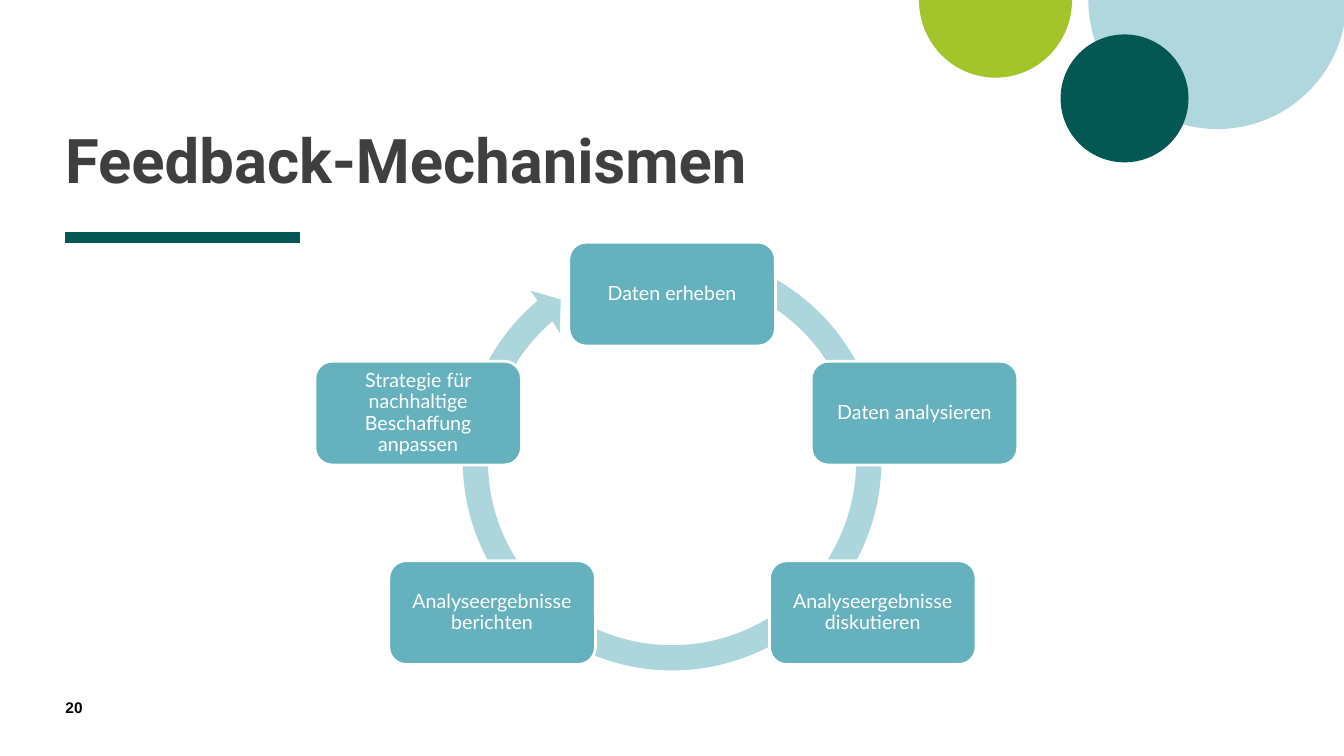
from math import cos, radians, sin, tan

from lxml.etree import Element, SubElement
from pptx import Presentation
from pptx.dml.color import RGBColor
from pptx.enum.shapes import MSO_CONNECTOR, MSO_SHAPE
from pptx.enum.text import MSO_ANCHOR, PP_ALIGN
from pptx.oxml.ns import qn
from pptx.util import Pt

WHITE = RGBColor(0xFF, 0xFF, 0xFF)
BLACK = RGBColor(0x00, 0x00, 0x00)
CHARCOAL = RGBColor(0x3F, 0x3F, 0x3F)
DARK_GREEN = RGBColor(0x03, 0x58, 0x54)
LIME = RGBColor(0xA3, 0xC4, 0x2A)
PALE_BLUE = RGBColor(0xAF, 0xD7, 0xDD)
TEAL = RGBColor(0x65, 0xB1, 0xBE)

STEP_WIDTH, STEP_HEIGHT = 147.6, 74.2
STEPS = [
    ("Daten erheben", 181.4, 0),
    ("Daten analysieren", 354.5, 85),
    ("Analyseergebnisse diskutieren", 324.7, 227.5),
    ("Analyseergebnisse berichten", 52.8, 227.5),
    ("Strategie für nachhaltige Beschaffung anpassen", 0, 85),
]
RING_CENTRE = (255.2, 156.4)
OUTER_RADIUS, INNER_RADIUS = 149.5, 131.5
ARC_PIECES = 5
ARROWHEAD = [(154.1, 34.6), (175.7, 41), (175, 64.8), (170, 56.9)]


def fill_plain(shape, colour):
    """Give a shape a flat fill without outline or shadow."""
    shape.shadow.inherit = False
    shape.fill.solid()
    shape.fill.fore_color.rgb = colour
    shape.line.fill.background()


def write(frame, text, font, size, colour, bold=False, spacing=1.0, inset=0):
    """Write one paragraph into a wrapping text frame and return it."""
    frame.word_wrap = True
    frame.margin_left = frame.margin_right = Pt(inset)
    frame.margin_top = frame.margin_bottom = Pt(inset)
    paragraph = frame.paragraphs[0]
    paragraph.line_spacing = spacing
    run = paragraph.add_run()
    run.text = text
    run.font.name = font
    run.font.size = Pt(size)
    run.font.bold = bold
    run.font.color.rgb = colour
    return paragraph


def add_corner_circles(slide, left, top):
    """Place the two half discs and the full disc in the upper corner."""
    discs = [
        (MSO_SHAPE.PIE, 121, -92.2, 184.4, 184.4, PALE_BLUE),
        (MSO_SHAPE.PIE, 0, -55.4, 109.4, 110.9, LIME),
        (MSO_SHAPE.OVAL, 101.2, 24.6, 91.4, 91.4, DARK_GREEN),
    ]
    for kind, x, y, width, height, colour in discs:
        disc = slide.shapes.add_shape(
            kind, Pt(left + x), Pt(top + y), Pt(width), Pt(height))
        fill_plain(disc, colour)
        if kind == MSO_SHAPE.PIE:
            disc.adjustments[0] = 0
            disc.adjustments[1] = 108


def add_heading(slide, left, top, width, height):
    """Place the title at the bottom of its box, with the bar below."""
    title = slide.shapes.add_textbox(Pt(left), Pt(top), Pt(width), Pt(height))
    title.text_frame.vertical_anchor = MSO_ANCHOR.BOTTOM
    write(title.text_frame, "Feedback-Mechanismen", "Roboto", 44, CHARCOAL,
          bold=True, spacing=0.8)
    bar_y = top + height + 30.2
    bar = slide.shapes.add_connector(
        MSO_CONNECTOR.STRAIGHT, Pt(left), Pt(bar_y), Pt(left + 168), Pt(bar_y))
    bar.line.color.rgb = DARK_GREEN
    bar.line.width = Pt(8)
    SubElement(bar.element.spPr, qn("a:effectLst"))


def arc_points(radius, start, end):
    """Return the start of an arc and three Bézier points for each piece."""
    turn = radians(end - start) / ARC_PIECES
    pull = 4 / 3 * tan(turn / 4)

    def spot(angle, shift):
        return (RING_CENTRE[0] + radius * (cos(angle) - shift * sin(angle)),
                RING_CENTRE[1] + radius * (sin(angle) + shift * cos(angle)))

    points = [spot(radians(start), 0)]
    for piece in range(ARC_PIECES):
        angle = radians(start) + piece * turn
        points += [spot(angle, pull), spot(angle + turn, -pull),
                   spot(angle + turn, 0)]
    return points


def add_ring(slide, left, top):
    """Draw the translucent circular arrow behind the steps."""
    outer = arc_points(OUTER_RADIUS, -70.4, 230)
    inner = arc_points(INNER_RADIUS, 229.4, -70.4)
    points = [(Pt(left + x), Pt(top + y))
              for x, y in outer + ARROWHEAD + inner]
    builder = slide.shapes.build_freeform(*points[0])
    builder.add_line_segments(points[1:], close=True)
    ring = builder.convert_to_shape()

    segments = list(ring.element.spPr.iter(qn("a:lnTo")))
    curved = 3 * ARC_PIECES
    for arc in (segments[:curved], segments[-curved:]):
        for first in range(0, curved, 3):
            curve = Element(qn("a:cubicBezTo"))
            arc[first].addprevious(curve)
            for segment in arc[first:first + 3]:
                curve.append(segment[0])
                segment.getparent().remove(segment)

    fill_plain(ring, TEAL)
    colour = ring.element.spPr.find(qn("a:solidFill")).find(qn("a:srgbClr"))
    SubElement(colour, qn("a:alpha"), val="53000")


def add_cycle(slide, left, top):
    """Place the ring and the five steps around it."""
    add_ring(slide, left, top)
    for label, x, y in STEPS:
        step = slide.shapes.add_shape(
            MSO_SHAPE.ROUNDED_RECTANGLE, Pt(left + x), Pt(top + y),
            Pt(STEP_WIDTH), Pt(STEP_HEIGHT))
        fill_plain(step, TEAL)
        step.line.color.rgb = WHITE
        step.line.width = Pt(2)
        step.text_frame.vertical_anchor = MSO_ANCHOR.MIDDLE
        paragraph = write(step.text_frame, label, "Lato", 14, WHITE,
                          spacing=0.9, inset=4.2)
        paragraph.alignment = PP_ALIGN.CENTER


def add_page_number(slide, left, top, width, height):
    """Place the page number in the lower corner."""
    number = slide.shapes.add_textbox(Pt(left), Pt(top), Pt(width), Pt(height))
    write(number.text_frame, "20", "Arial", 11, BLACK, bold=True)


def main():
    """Build the slide and save it."""
    presentation = Presentation()
    presentation.slide_width = Pt(960)
    presentation.slide_height = Pt(540)
    slide = presentation.slides.add_slide(presentation.slide_layouts[6])
    add_corner_circles(slide, 656.4, 0)
    add_heading(slide, 46.5, 22.2, 769.7, 117.4)
    add_cycle(slide, 224.9, 173)
    add_page_number(slide, 46.8, 498.6, 41, 19.4)
    presentation.save("out.pptx")


if __name__ == "__main__":
    main()
